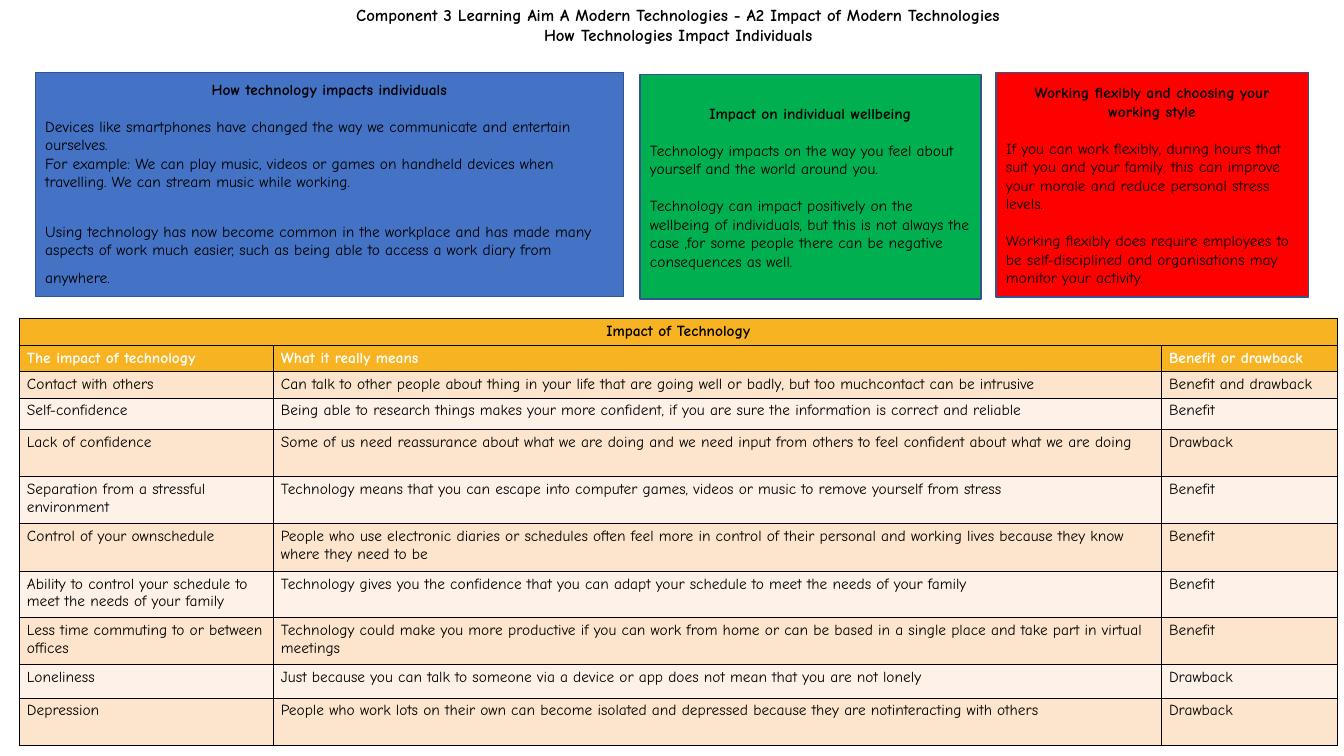
from dataclasses import dataclass

from lxml import etree
from pptx import Presentation
from pptx import util as u
from pptx.dml import color
from pptx.enum import shapes, text

FONT = "Comic Neue"
BLACK, WHITE = "000000", "FFFFFF"
GOLD, PEACH, CREAM = "F8B323", "FCE5CC", "FEF2E8"
EDGE = "325491"
GAP = 13.2  # height of one line of body text, in points
NS = "http://schemas.openxmlformats.org/drawingml/2006/main"


@dataclass
class Para:
    words: str
    gap: float = 0
    tail: str = ""


@dataclass
class Box:
    left: float
    top: float
    width: float
    height: float
    fill: str
    head: str
    body: list[Para]


BOXES = [
    Box(0.89, 1.83, 14.83, 5.64, "4472C4", "How technology impacts individuals", [
        Para("Devices like smartphones have changed the way we communicate and entertain ourselves. ", GAP),
        Para("For example: We can play music, videos or games on handheld devices when travelling. "
             "We can stream music while working."),
        Para("Using technology has now become common in the workplace and has made many aspects of "
             "work much easier, such as being able to access a work diary from anywhere.", 22, " "),
    ]),
    Box(16.13, 1.88, 8.59, 5.66, "00B050", "Impact on individual wellbeing", [
        Para("Technology impacts on the way you feel about yourself and the world around you.", GAP),
        Para("Technology can impact positively on the wellbeing of individuals, but this is not always "
             "the case ,for some people there can be negative consequences as well. ", GAP),
    ]),
    Box(25.1, 1.83, 7.87, 5.66, "FF0000", "Working flexibly and choosing your working style", [
        Para("If you can work flexibly, during hours that suit you and your family, this can improve "
             "your morale and reduce personal stress levels.", GAP),
        Para("Working flexibly does require employees to be self-disciplined and organisations may "
             "monitor your activity.", GAP),
    ]),
]

WIDTHS = [6.4, 22.38, 4.45]
HEIGHTS = [0.66, 0.66, 0.5, 0.79, 1.19, 1.19, 1.19, 1.17, 1.19, 0.84, 1.19]
ROWS = [
    ("Impact of Technology", "", ""),
    ("The impact of technology", "What it really means", "Benefit or drawback"),
    ("Contact with others",
     "Can talk to other people about thing in your life that are going well or badly, "
     "but too muchcontact can be intrusive", "Benefit and drawback"),
    ("Self-confidence",
     "Being able to research things makes your more confident, if you are sure the "
     "information is correct and reliable", "Benefit"),
    ("Lack of confidence",
     "Some of us need reassurance about what we are doing and we need input from others "
     "to feel confident about what we are doing", "Drawback"),
    ("Separation from a stressful environment",
     "Technology means that you can escape into computer games, videos or music to remove "
     "yourself from stress", "Benefit"),
    ("Control of your ownschedule",
     "People who use electronic diaries or schedules often feel more in control of their "
     "personal and working lives because they know where they need to be", "Benefit"),
    ("Ability to control your schedule to meet the needs of your family",
     "Technology gives you the confidence that you can adapt your schedule to meet the "
     "needs of your family", "Benefit"),
    ("Less time commuting to or between offices",
     "Technology could make you more productive if you can work from home or can be based "
     "in a single place and take part in virtual meetings", "Benefit"),
    ("Loneliness",
     "Just because you can talk to someone via a device or app does not mean that you are "
     "not lonely", "Drawback"),
    ("Depression",
     "People who work lots on their own can become isolated and depressed because they are "
     "notinteracting with others", "Drawback"),
]


def rgb(code: str) -> color.RGBColor:
    return color.RGBColor.from_string(code)


def style(font, size: float, bold: bool, tint: str = BLACK, name: str = FONT) -> None:
    font.name, font.size, font.bold = name, u.Pt(size), bold
    font.color.rgb = rgb(tint)


def write(par, words: str, size: float = 11, bold: bool = False,
          mid: bool = False, tint: str = BLACK) -> None:
    par.text = words
    par.alignment = text.PP_ALIGN.CENTER if mid else text.PP_ALIGN.LEFT
    style(par.font, size, bold, tint)


def add_title(slide) -> None:
    frame = slide.shapes.add_textbox(u.Cm(0.33), 0, u.Cm(33.53), u.Cm(1.27)).text_frame
    frame.word_wrap = True
    frame.vertical_anchor = text.MSO_ANCHOR.MIDDLE
    write(frame.paragraphs[0],
          "Component 3 Learning Aim A Modern Technologies - A2 Impact of Modern Technologies",
          12, True, True)
    write(frame.add_paragraph(), "How Technologies Impact Individuals", 12, True, True)


def add_box(slide, box: Box) -> None:
    area = [u.Cm(n) for n in (box.left, box.top, box.width, box.height)]
    shape = slide.shapes.add_shape(shapes.MSO_SHAPE.RECTANGLE, *area)
    shape.shadow.inherit = False
    shape.fill.solid()
    shape.fill.fore_color.rgb = rgb(box.fill)
    shape.line.color.rgb = rgb(EDGE)
    shape.line.width = u.Pt(1)
    frame = shape.text_frame
    frame.word_wrap = True
    frame.vertical_anchor = text.MSO_ANCHOR.MIDDLE
    write(frame.paragraphs[0], box.head, bold=True, mid=True)
    for item in box.body:
        par = frame.add_paragraph()
        write(par, item.words)
        par.space_before = u.Pt(item.gap)
        if item.tail:
            run = par.add_run()
            run.text = item.tail
            style(run.font, 18, False, WHITE, "Calibri")


def add_edges(cell) -> None:
    props = cell._tc.get_or_add_tcPr()
    for side in ("lnL", "lnR", "lnT", "lnB"):
        line = etree.SubElement(props, f"{{{NS}}}{side}", w=str(u.Pt(0.75)))
        fill = etree.SubElement(line, f"{{{NS}}}solidFill")
        etree.SubElement(fill, f"{{{NS}}}srgbClr", val=BLACK)


def add_grid(slide) -> None:
    grid = slide.shapes.add_table(len(ROWS), len(WIDTHS), u.Cm(0.48), u.Cm(8.03),
                                  u.Cm(sum(WIDTHS)), u.Cm(sum(HEIGHTS))).table
    grid.first_row = grid.horz_banding = False
    for col, width in zip(grid.columns, WIDTHS):
        col.width = u.Cm(width)
    for row, height in zip(grid.rows, HEIGHTS):
        row.height = u.Cm(height)
    grid.cell(0, 0).merge(grid.cell(0, len(WIDTHS) - 1))
    for r, row in enumerate(ROWS):
        back = GOLD if r < 2 else (PEACH, CREAM)[r % 2]
        for c, words in enumerate(row):
            cell = grid.cell(r, c)
            cell.margin_left = cell.margin_right = u.Cm(0.2)
            cell.margin_top = cell.margin_bottom = u.Cm(0.1)
            add_edges(cell)
            cell.fill.solid()
            cell.fill.fore_color.rgb = rgb(back)
            write(cell.text_frame.paragraphs[0], words, bold=r < 2, mid=r == 0,
                  tint=WHITE if r == 1 else BLACK)


def main() -> None:
    deck = Presentation()
    deck.slide_width, deck.slide_height = u.Cm(33.87), u.Cm(19.05)
    slide = deck.slides.add_slide(deck.slide_layouts[6])
    # Heading
    add_title(slide)
    # Coloured panels
    for box in BOXES:
        add_box(slide, box)
    # Table of impacts
    add_grid(slide)
    deck.save("out.pptx")


if __name__ == "__main__":
    main()
